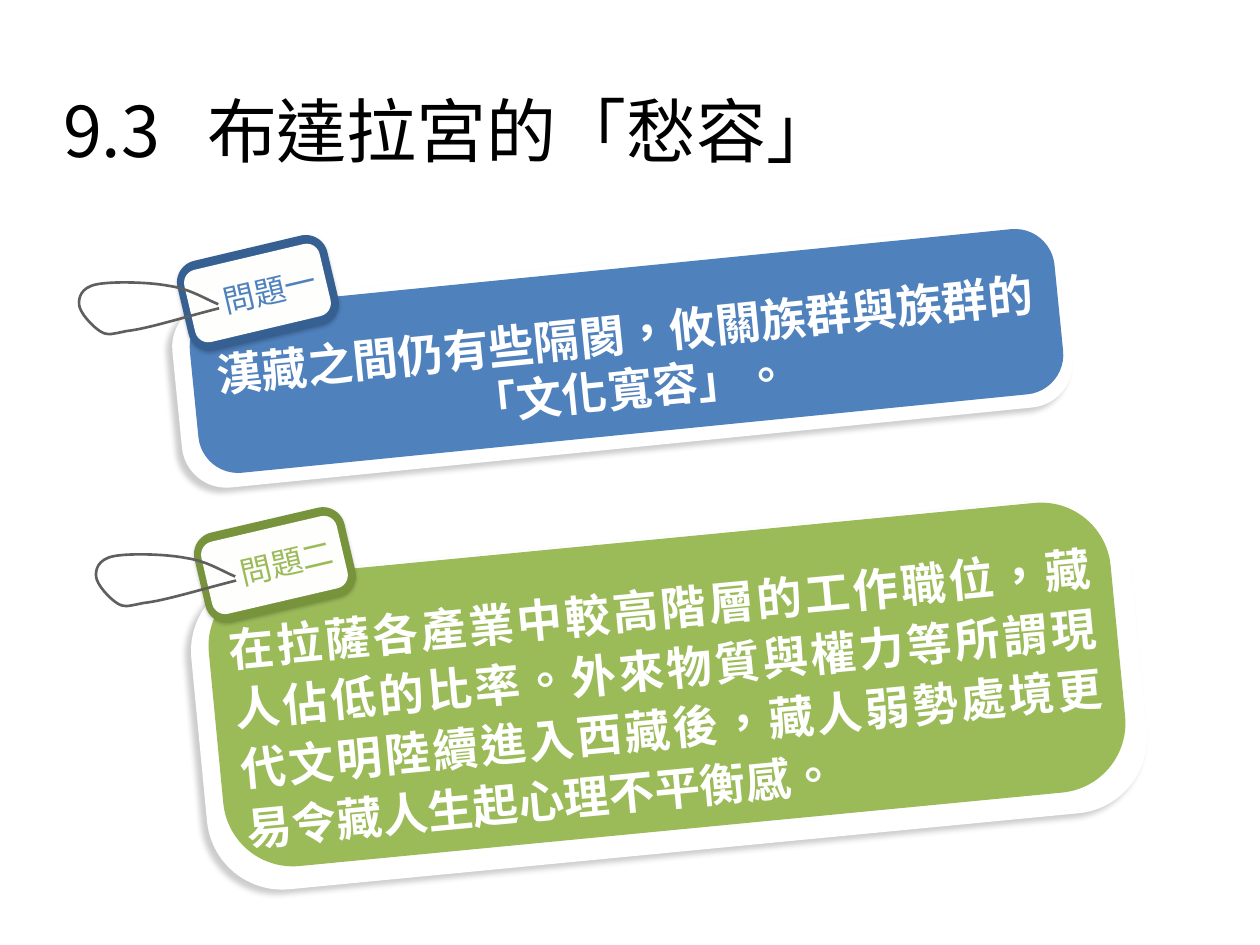
from lxml.etree import SubElement
from pptx import Presentation
from pptx.dml.color import RGBColor
from pptx.enum.lang import MSO_LANGUAGE_ID as Language
from pptx.enum.shapes import MSO_SHAPE as Shape
from pptx.enum.text import MSO_ANCHOR as Anchor, PP_ALIGN as Align
from pptx.oxml.ns import qn
from pptx.util import Pt

PX = 914400 // 126
CJK_FONT, LATIN_FONT = "Noto Sans CJK JP", "Times New Roman"
WHITE, PAPER, STRING = "FFFFFF", "FEFEFD", "5F5F5F"
LOOP_POINTS = [
    (37, 54),
    (23, 49), (8, 40), (-13, 38),
    (-33, 35), (-71, 36), (-86, 40),
    (-101, 44), (-103, 54), (-102, 61),
    (-101, 69), (-88, 82), (-79, 87),
    (-72, 90), (-72, 90), (-53, 85),
    (-33, 82), (5, 68), (38, 58),
]


def color(value):
    """Turn a hex string into a colour."""
    return RGBColor.from_string(value)


def add_run(para, text, size, font, fill, bold=False):
    """Add one styled Traditional Chinese run."""
    span = para.add_run()
    span.text = text
    span.font.size, span.font.bold = Pt(size), bold
    span.font.name = font
    span.font.color.rgb = color(fill)
    span.font.language_id = Language.TRADITIONAL_CHINESE
    SubElement(span.font._element, qn("a:ea"), typeface=CJK_FONT)


def set_frame(box, left=0, top=0):
    """Prepare a wrapping, middle-anchored frame and return its paragraph."""
    frame = box.text_frame
    frame.word_wrap = True
    frame.vertical_anchor = Anchor.MIDDLE
    frame.margin_left, frame.margin_top = left * PX, top * PX
    frame.margin_right = frame.margin_bottom = 0
    return frame.paragraphs[0]


def add_shadow(shape, blur, distance, angle):
    """Give a shape a soft black outer shadow."""
    effects = shape._element.spPr.find(qn("a:effectLst"))
    shadow = SubElement(effects, qn("a:outerShdw"), blurRad=str(Pt(blur)),
                        dist=str(Pt(distance)), dir=str(angle * 60000),
                        algn="ctr", rotWithShape="0")
    black = SubElement(shadow, qn("a:srgbClr"), val="000000")
    SubElement(black, qn("a:alpha"), val="20000")


def add_shape(page, kind, bounds, angle, fill, radius=None):
    """Add a rotated, filled shape without outline."""
    shape = page.shapes.add_shape(kind, *(value * PX for value in bounds))
    shape.shadow.inherit = False
    shape.fill.solid()
    shape.fill.fore_color.rgb = color(fill)
    shape.line.fill.background()
    shape.rotation = angle
    if radius is not None:
        shape.adjustments[0] = radius
    return shape


def bend_segments(shape):
    """Turn each three line segments of a freeform into one cubic curve."""
    outline = next(shape._element.iter(qn("a:path")))
    lines = outline.findall(qn("a:lnTo"))
    for index in range(0, len(lines), 3):
        curve = SubElement(outline, qn("a:cubicBezTo"))
        for line in lines[index:index + 3]:
            curve.append(line[0])
            outline.remove(line)


def add_loop(page, left, top, angle):
    """Draw the string loop of a tag."""
    points = [((left + x) * PX, (top + y) * PX) for x, y in LOOP_POINTS]
    builder = page.shapes.build_freeform(*points[0], scale=1.0)
    builder.add_line_segments(points[1:], close=False)
    loop = builder.convert_to_shape()
    bend_segments(loop)
    loop.shadow.inherit = False
    loop.fill.background()
    loop.line.color.rgb = color(STRING)
    loop.line.width = Pt(1.5)
    loop.rotation = angle


def add_tag(page, left, top, angle, label, fill, border):
    """Add a hanging label with its hole and string."""
    frame = add_shape(page, Shape.ROUNDED_RECTANGLE, (left, top, 154, 92),
                      angle, border, 0.24)
    add_shadow(frame, 2, 1, 100)
    face = add_shape(page, Shape.ROUNDED_RECTANGLE, (left + 7, top + 9, 139, 74),
                     angle, PAPER, 0.18)
    para = set_frame(face, left=25)
    para.alignment = Align.CENTER
    add_run(para, label, 18, LATIN_FONT, fill)
    add_shape(page, Shape.OVAL, (left + 18, top + 45, 23, 23), angle + 16 - 360, WHITE)
    add_loop(page, left, top, angle + 16 - 360)


def add_note(page, back, front, angle, fill, text, align):
    """Add a coloured note on a white shadowed card and return its paragraph."""
    card = add_shape(page, Shape.ROUNDED_RECTANGLE, back, angle, WHITE, 0.24)
    add_shadow(card, 3, 4, 135)
    note = add_shape(page, Shape.ROUNDED_RECTANGLE, front, angle, fill, 0.24)
    para = set_frame(note, top=20)
    para.alignment = align
    add_run(para, text, 26, LATIN_FONT, WHITE, bold=True)
    return para


def add_title(page):
    """Add the title with its number set off by a tab stop."""
    box = page.shapes.add_textbox(35 * PX, 35 * PX, 1191 * PX, 189 * PX)
    para = set_frame(box, left=28)
    tabs = SubElement(para._p.get_or_add_pPr(), qn("a:tabLst"))
    SubElement(tabs, qn("a:tab"), pos=str(144 * PX), algn="l")
    add_run(para, "9.3\t布達拉宮的「愁容」", 40, CJK_FONT, "000000")


def main():
    """Build and save the slide."""
    deck = Presentation()
    deck.slide_width, deck.slide_height = 1260 * PX, 945 * PX
    page = deck.slides.add_slide(deck.slide_layouts[6])
    add_title(page)
    add_note(page, (175, 262, 895, 186), (192, 268, 869, 166), 354.3, "4F81BD",
             "漢藏之間仍有些隔閡，攸關族群與族群的「文化寬容」。", Align.CENTER)
    add_tag(page, 181, 247, 346.7, "問題一", "4F81BD", "376092")
    para = add_note(page, (197, 537, 944, 315), (214, 539, 906, 291), 354.5, "9BBB59",
                    "在拉薩各產業中較高階層的工作職位，藏人佔低的比率。"
                    "外來物質與權力等所謂現代文明陸續進入西藏後，"
                    "藏人弱勢處境更易令藏人生起心理不平衡感。", Align.JUSTIFY)
    para.line_spacing, para.space_after = 1.1, Pt(3)
    add_tag(page, 198, 519, 346.9, "問題二", "9BBB59", "77933C")
    deck.save("out.pptx")


if __name__ == "__main__":
    main()
